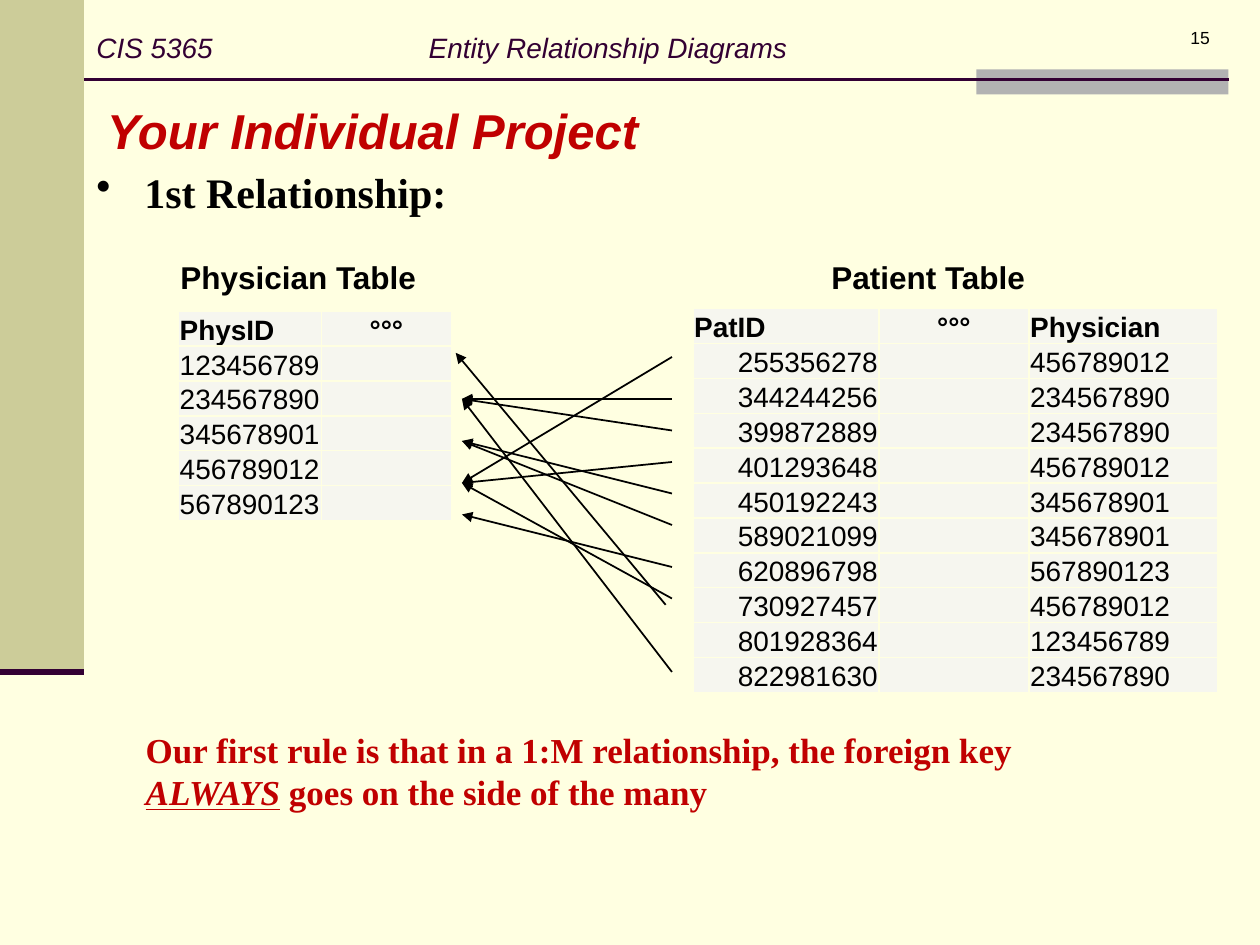
from lxml.etree import SubElement
from pptx import Presentation
from pptx.dml.color import RGBColor
from pptx.enum.shapes import MSO_CONNECTOR, MSO_SHAPE
from pptx.enum.text import MSO_ANCHOR, PP_ALIGN
from pptx.oxml.ns import qn
from pptx.util import Inches, Pt

CREAM = RGBColor(0xFF, 0xFF, 0xE1)
KHAKI = RGBColor(0xCC, 0xCC, 0x99)
GREY = RGBColor(0xB2, 0xB2, 0xB2)
PLUM = RGBColor(0x33, 0x00, 0x33)
RED = RGBColor(0xC0, 0x00, 0x00)
BLACK = RGBColor(0x00, 0x00, 0x00)
CELL = RGBColor(0xF6, 0xF6, 0xEF)
SANS, SERIF = "Arial", "Times New Roman"
COLS, ROWS = 120, 90
ROW_HEIGHT = 3.32


class Deck:
    def __init__(self):
        self.prs = Presentation()
        self.prs.slide_width, self.prs.slide_height = Inches(10), Inches(7.5)
        self.s = self.prs.slides.add_slide(self.prs.slide_layouts[5])
        fill = self.s.background.fill
        fill.solid()
        fill.fore_color.rgb = CREAM

    def x(self, cols):
        return round(self.prs.slide_width * cols / COLS)

    def y(self, rows):
        return round(self.prs.slide_height * rows / ROWS)

    def box(self, left, top, width, height):
        return self.x(left), self.y(top), self.x(width), self.y(height)

    def run(self, p, text, size, color=BLACK, font=SANS, bold=False, italic=False, underline=False):
        r = p.add_run()
        r.text = text
        f = r.font
        f.size, f.name, f.color.rgb = Pt(size), font, color
        f.bold, f.italic, f.underline = bold, italic, underline

    def title(self, at, text, **style):
        sp = self.s.shapes.title
        sp.left, sp.top, sp.width, sp.height = self.box(*at)
        tf = sp.text_frame
        tf.vertical_anchor = MSO_ANCHOR.TOP
        p = tf.paragraphs[0]
        p.alignment = PP_ALIGN.LEFT
        self.run(p, text, **style)

    def text(self, at, runs, align=PP_ALIGN.LEFT, anchor=MSO_ANCHOR.TOP, wrap=True, **style):
        tf = self.s.shapes.add_textbox(*self.box(*at)).text_frame
        tf.word_wrap, tf.vertical_anchor = wrap, anchor
        p = tf.paragraphs[0]
        p.alignment = align
        for text, extra in runs:
            self.run(p, text, **{**style, **extra})
        return p

    def bullet(self, at, text, **style):
        p = self.text(at, [(text, {})], **style)
        p.line_spacing = 0.85
        pPr = p._p.get_or_add_pPr()
        pPr.set("marL", str(Inches(0.38)))
        pPr.set("indent", str(-Inches(0.38)))
        SubElement(pPr, qn("a:buChar"), char="•")

    def tab_stop(self, p, cols):
        tabs = SubElement(p._p.get_or_add_pPr(), qn("a:tabLst"))
        SubElement(tabs, qn("a:tab"), pos=str(self.x(cols)), algn="l")

    def rect(self, at, color):
        sp = self.s.shapes.add_shape(MSO_SHAPE.RECTANGLE, *self.box(*at))
        sp.shadow.inherit = False
        sp.fill.solid()
        sp.fill.fore_color.rgb = color
        sp.line.fill.background()

    def line(self, x1, y1, x2, y2, color=BLACK, width=1, arrow=False):
        c = self.s.shapes.add_connector(
            MSO_CONNECTOR.STRAIGHT, self.x(x1), self.y(y1), self.x(x2), self.y(y2))
        c.line.color.rgb, c.line.width = color, Pt(width)
        if arrow:
            SubElement(c.line._get_or_add_ln(), qn("a:headEnd"), type="triangle")
        SubElement(c._element.spPr, qn("a:effectLst"))

    def border(self, cell):
        tcPr = cell._tc.get_or_add_tcPr()
        for side in ("lnL", "lnR", "lnT", "lnB"):
            ln = SubElement(tcPr, qn(f"a:{side}"), w=str(Pt(1)))
            fill = SubElement(ln, qn("a:solidFill"))
            SubElement(fill, qn("a:srgbClr"), val=str(CREAM))

    def cell(self, cell, text, align, bold):
        self.border(cell)
        cell.fill.solid()
        cell.fill.fore_color.rgb = CELL
        cell.vertical_anchor = MSO_ANCHOR.BOTTOM
        cell.margin_left = cell.margin_right = cell.margin_top = Inches(0.01)
        cell.margin_bottom = 0
        p = cell.text_frame.paragraphs[0]
        p.alignment = align
        if text:
            self.run(p, text, 16, bold=bold)
        else:
            SubElement(p._p, qn("a:endParaRPr"), sz="1600")

    def table(self, left, top, widths, rows, aligns):
        at = self.box(left, top, sum(widths), ROW_HEIGHT * len(rows))
        tbl = self.s.shapes.add_table(len(rows), len(widths), *at).table
        tbl.first_row = tbl.horz_banding = False
        for col, width in zip(tbl.columns, widths):
            col.width = self.x(width)
        for i, values in enumerate(rows):
            tbl.rows[i].height = self.y(ROW_HEIGHT)
            for j, value in enumerate(values):
                align = aligns[j] if i else PP_ALIGN.CENTER if value == "°°°" else PP_ALIGN.LEFT
                self.cell(tbl.cell(i, j), value, align, bold=i == 0)


PHYSICIANS = ["123456789", "234567890", "345678901", "456789012", "567890123"]
PATIENTS = [
    ("255356278", "456789012"), ("344244256", "234567890"), ("399872889", "234567890"),
    ("401293648", "456789012"), ("450192243", "345678901"), ("589021099", "345678901"),
    ("620896798", "567890123"), ("730927457", "456789012"), ("801928364", "123456789"),
    ("822981630", "234567890"),
]
TIPS = dict(zip(PHYSICIANS, (33.6, 38, 42, 46, 49)))
STARTS = (34, 38, 41, 44, 47, 50, 54, 57, 57.6, 64)


def main():
    d = Deck()
    d.rect((0, 0, 8, 64), KHAKI)
    d.rect((93, 6.6, 24, 2.4), GREY)
    d.line(8, 7.56, 117, 7.56, PLUM, 1.5)
    d.line(0, 64, 8, 64, PLUM, 3.5)
    d.title((9, 9, 63, 6.84), "Your Individual Project",
            size=28, color=RED, bold=True, italic=True)
    d.text((91.4, 2, 25, 6), [("15", {})], align=PP_ALIGN.RIGHT, size=10)
    header = d.text((8, -3, 110, 15), [("CIS 5365\tEntity Relationship Diagrams", {})],
                    anchor=MSO_ANCHOR.MIDDLE, size=16, color=PLUM, italic=True)
    d.tab_stop(header, 31.65)
    d.bullet((8, 16, 111, 5.3), "1st Relationship:", size=24, font=SERIF, bold=True)

    d.text((16, 24, 26, 4.8), [("Physician Table", {})], wrap=False, size=18, bold=True)
    d.table(17, 29.64, (13.6, 12.4),
            [("PhysID", "°°°")] + [(phys, "") for phys in PHYSICIANS],
            (PP_ALIGN.LEFT, PP_ALIGN.CENTER))
    d.text((78, 24, 21.8, 4.8), [("Patient Table", {})], wrap=False, size=18, bold=True)
    d.table(66, 29.4, (17.7, 14.3, 18),
            [("PatID", "°°°", "Physician")] + [(pat, "", phys) for pat, phys in PATIENTS],
            (PP_ALIGN.RIGHT, PP_ALIGN.CENTER, PP_ALIGN.LEFT))

    for (_, phys), start in zip(PATIENTS, STARTS):
        left = 43.4 if phys == PHYSICIANS[0] else 44
        d.line(left, TIPS[phys], left + 20, start, arrow=True)

    d.text((12.7, 68.8, 96.2, 9.24), [
        ("Our first rule is that in a 1:M relationship, the foreign key ", {}),
        ("ALWAYS", {"italic": True, "underline": True}),
        (" goes on the side of the many", {}),
    ], size=20, color=RED, font=SERIF, bold=True)
    d.prs.save("out.pptx")


if __name__ == "__main__":
    main()
